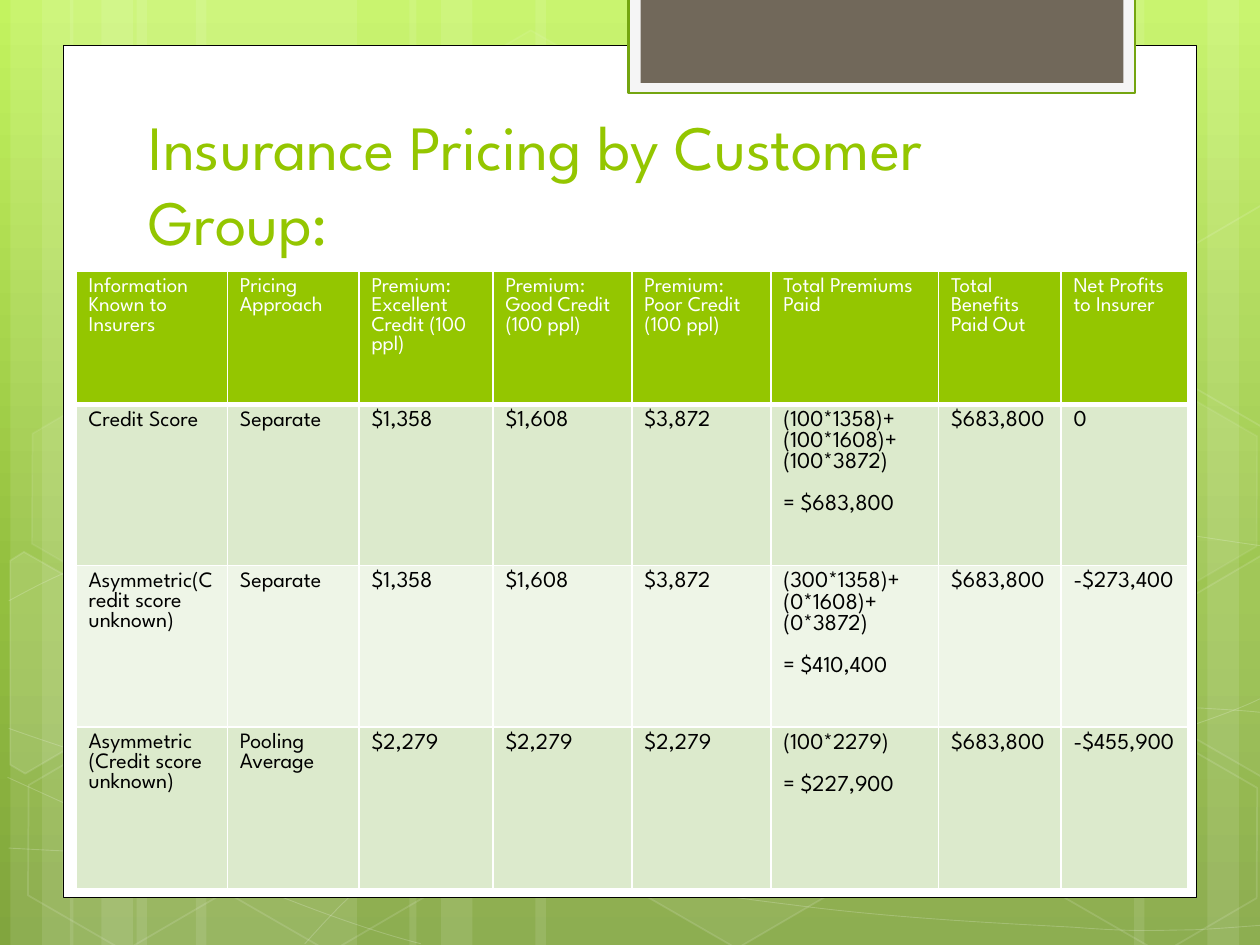
from dataclasses import dataclass
from copy import deepcopy

from lxml.etree import SubElement
from pptx import Presentation
from pptx.dml.color import RGBColor
from pptx.enum.shapes import MSO_SHAPE as SHAPE
from pptx.enum.text import MSO_ANCHOR as ANCHOR, MSO_AUTO_SIZE as AUTOSIZE, PP_ALIGN as ALIGN
from pptx.oxml.ns import qn
from pptx.util import Pt


@dataclass(frozen=True)
class Theme:
    font: str = "League Spartan"
    white: str = "FFFFFF"
    black: str = "000000"
    green: str = "94C600"
    tab_line: str = "74A510"
    tab_edge: str = "F5F5F5"
    tab: str = "71685A"
    odd_row: str = "DCEACC"
    even_row: str = "EEF5E7"
    backdrop: tuple = ((0, "C3F35F"), (0.62, "93BF3F"), (1, "81A53E"))
    title_size: float = 36
    header_size: float = 12
    label_size: float = 12.5
    value_size: float = 13


T = Theme()
WIDTH, HEIGHT = 720, 540

# left, width
BANDS = [(78, 126), (6, 36), (24, 60), (112, 126), (40, 36), (58, 60), (528, 126),
         (690, 36), (648, 60), (306, 222), (234, 36), (252, 60)]

# start point, then two control points and an end point for each segment
CURVES = [
    [(5, 484.6), (43.9, 486.7), (82.8, 488.9), (136.8, 488.2), (190.8, 487.4), (257.8, 486),
     (329.8, 478.8), (401.8, 471.6), (504, 457.9), (570.2, 444.2), (635.8, 430.6),
     (703.4, 409), (725, 396.7)],
    [(5, 343.4), (25.9, 331.9), (46.8, 321.1), (87.1, 310.3), (128.2, 299.5), (186.5, 283.7),
     (249.8, 278.6), (313.9, 273.6), (391.7, 272.9), (470.9, 278.6), (550.1, 284.4),
     (681.8, 306.7), (725, 312.5)],
    [(4.3, 444.2), (91.4, 483.8), (177.8, 523.4), (240.5, 539.3)],
    [(5, 416.2), (27.4, 424.1), (50.4, 432), (92.2, 443.5), (133.9, 454.3), (196.6, 472.3),
     (257, 484.6), (316.8, 496.8), (392.4, 509.8), (452.2, 517), (511.9, 524.9),
     (576, 527.8), (614.2, 529.9), (651.6, 532.8), (661.7, 531.4), (680.4, 531.4),
     (699.1, 530.6), (712.1, 529.2), (725, 528.5)],
    [(174.2, 539.3), (187.2, 524.9), (200.2, 510.5), (217.4, 497.5), (234.7, 484.6),
     (259.2, 470.2), (279.4, 460.1), (299.5, 450), (311.8, 445.7), (338.4, 438.5),
     (364.3, 431.3), (412.6, 421.2), (437.8, 416.2), (463.7, 411.1), (467.3, 411.1),
     (489.6, 409.7), (511.9, 407.5), (547.2, 405.4), (571.7, 404.6), (596.9, 403.9),
     (637.9, 404.6), (637.9, 404.6), (654, 404.6), (670, 404.6), (686.2, 404.6),
     (699.1, 405.4), (711.4, 406.1), (717.8, 406.8), (724.3, 407.5), (722.2, 406.8),
     (724.3, 407.5)],
]

# left, top, fill opacity (None for no fill), line opacity
HEXAGONS = [(240.5, 25.9, 4, 8), (357.8, 424.1, 6, 12), (7.9, 425.5, None, 12),
            (10.1, 224.6, 7, 8), (125.3, 426.2, None, 12), (542.2, 326.2, 10, 12),
            (600.5, 427, None, 12), (600.5, 226.1, 7, 8)]

# points, fill opacity
CUT_HEXAGONS = [
    ([(5.8, 320.4), (13.7, 315.4), (69.1, 347), (68.4, 410.4), (14.4, 442.1), (5.8, 437)], 10),
    ([(666.7, 349.2), (720.7, 317.5), (726.5, 321.1), (726.5, 441.4), (721.4, 444.2),
      (666.7, 412.6)], 4),
    ([(666.7, 149), (720.7, 117.4), (727.2, 121), (726.5, 241.2), (721.4, 244.1),
      (666.7, 212.4)], None),
]

COLUMNS = [86.4, 75.2, 76.6, 79.4, 79.4, 95.8, 70, 72.6]
ROWS = [75.9, 92.2, 92.2, 92.2]
CELLS = [
    ["Information Known to Insurers", "Pricing Approach", "Premium: Excellent Credit (100 ppl)",
     "Premium: Good Credit\n(100 ppl)", "Premium: Poor Credit\n(100 ppl)",
     "Total Premiums Paid", "Total Benefits Paid Out", "Net Profits to Insurer"],
    ["Credit Score", "Separate", "$1,358", "$1,608", "$3,872",
     "(100*1358)+\n(100*1608)+\n(100*3872)\n= $683,800", "$683,800", "0"],
    ["Asymmetric(Credit score unknown)", "Separate", "$1,358", "$1,608", "$3,872",
     "(300*1358)+\n(0*1608)+\n(0*3872)\n= $410,400", "$683,800", "-$273,400"],
    ["Asymmetric (Credit score unknown)", "Pooling Average", "$2,279", "$2,279", "$2,279",
     "(100*2279)\n= $227,900", "$683,800", "-$455,900"],
]


def rgb(color):
    return RGBColor.from_string(color)


def set_solid(fill, color, parent, opacity):
    fill.solid()
    fill.fore_color.rgb = rgb(color)
    if opacity < 100:
        clr = parent.find(qn("a:solidFill")).find(qn("a:srgbClr"))
        SubElement(clr, qn("a:alpha"), val=str(opacity * 1000))


def paint(sp, fill=None, line=None, width=1, fill_opacity=100, line_opacity=100):
    sp.shadow.inherit = False
    pr = sp._element.spPr
    if fill:
        set_solid(sp.fill, fill, pr, fill_opacity)
    else:
        sp.fill.background()
    if line:
        sp.line.width = Pt(width)
        set_solid(sp.line.fill, line, pr.find(qn("a:ln")), line_opacity)
    else:
        sp.line.fill.background()


def add_box(s, x, y, w, h, shape=SHAPE.RECTANGLE, **style):
    sp = s.shapes.add_shape(shape, Pt(x), Pt(y), Pt(w), Pt(h))
    paint(sp, **style)
    return sp


def add_outline(s, x, y, points, close, **style):
    points = [(Pt(x + px), Pt(y + py)) for px, py in points]
    builder = s.shapes.build_freeform(*points[0], scale=1.0)
    builder.add_line_segments(points[1:], close=close)
    sp = builder.convert_to_shape()
    paint(sp, **style)
    return sp


def bend(sp):
    """Join each three straight segments into one cubic curve."""
    outline = next(sp._element.iter(qn("a:pathLst")))[0]
    lines = outline.findall(qn("a:lnTo"))
    for i in range(0, len(lines), 3):
        cubic = SubElement(outline, qn("a:cubicBezTo"))
        for line in lines[i:i + 3]:
            cubic.append(line[0])
            outline.remove(line)


def set_backdrop(s):
    fill = s.background.fill
    fill.gradient()
    fill.gradient_angle = 270
    stops = next(s._element.iter(qn("a:gsLst")))
    stops.append(deepcopy(stops[0]))
    for stop, (position, color) in zip(fill.gradient_stops, T.backdrop):
        stop.position = position
        stop.color.rgb = rgb(color)


def add_decoration(s, x, y, h):
    for left, w in BANDS:
        add_box(s, x + left, y, w, h, fill=T.white, fill_opacity=10)
    for curve in CURVES:
        bend(add_outline(s, x, y, curve, False, line=T.white, width=0.5, line_opacity=20))
    for left, top, opacity, line_opacity in HEXAGONS:
        sp = add_box(s, x + left, y + top, 126, 109.4, SHAPE.HEXAGON, fill=opacity and T.white,
                     fill_opacity=opacity, line=T.white, line_opacity=line_opacity)
        sp.adjustments[0] = 0.285
        sp.rotation = 30
    for points, opacity in CUT_HEXAGONS:
        add_outline(s, x, y, points, True, fill=opacity and T.white, fill_opacity=opacity,
                    line=T.white, line_opacity=12)


def add_card(s, x, y, w, h):
    add_box(s, x, y, w, h, fill=T.white, line=T.black, width=0.5)
    add_box(s, x + 323.2, y - 27.4, 289.6, 54.8, fill=T.tab_edge, line=T.tab_line, width=1.25)
    add_box(s, x + 330, y - 27.4, 276, 48.8, fill=T.tab)


def place_title(s, x, y, w, h):
    title = s.shapes.title
    s.shapes._spTree.append(title._element)  # in front of the card
    title.left, title.top, title.width, title.height = Pt(x), Pt(y), Pt(w), Pt(h)
    tf = title.text_frame
    tf.text = "Insurance Pricing by Customer Group:"
    tf.auto_size = AUTOSIZE.NONE
    tf.vertical_anchor = ANCHOR.BOTTOM
    p = tf.paragraphs[0]
    p.alignment = ALIGN.LEFT
    p.font.name, p.font.size, p.font.color.rgb = T.font, Pt(T.title_size), rgb(T.green)


def set_borders(cell, header):
    tc_pr = cell._tc.get_or_add_tcPr()
    for side in "LRTB":
        width = 3 if header and side == "B" else 1
        ln = SubElement(tc_pr, qn(f"a:ln{side}"), w=str(Pt(width)))
        SubElement(SubElement(ln, qn("a:solidFill")), qn("a:srgbClr"), val=T.white)


def fill_cell(cell, text, row, col):
    header = row == 0
    set_borders(cell, header)
    cell.fill.solid()
    cell.fill.fore_color.rgb = rgb(T.green if header else T.odd_row if row % 2 else T.even_row)
    cell.text = text
    for p in cell.text_frame.paragraphs:
        size = T.header_size if header else T.label_size if col < 2 else T.value_size
        p.font.name, p.font.size, p.font.bold = T.font, Pt(size), False
        p.font.color.rgb = rgb(T.white if header else T.black)
        if p.text.startswith("="):
            p.space_before = Pt(12)


def add_pricing_table(s, x, y):
    table = s.shapes.add_table(len(ROWS), len(COLUMNS), Pt(x), Pt(y),
                               Pt(sum(COLUMNS)), Pt(sum(ROWS))).table
    for column, w in zip(table.columns, COLUMNS):
        column.width = Pt(w)
    for r, (row, h) in enumerate(zip(table.rows, ROWS)):
        row.height = Pt(h)
        for c, cell in enumerate(row.cells):
            fill_cell(cell, CELLS[r][c], r, c)


def main():
    prs = Presentation()
    prs.slide_width, prs.slide_height = Pt(WIDTH), Pt(HEIGHT)
    s = prs.slides.add_slide(prs.slide_layouts[5])
    set_backdrop(s)
    add_decoration(s, 0, 0, HEIGHT)
    add_card(s, 36, 26, 648, 487)
    place_title(s, 77.8, 61.2, 553, 90)
    add_pricing_table(s, 43.5, 155.2)
    prs.save("out.pptx")


if __name__ == "__main__":
    main()
